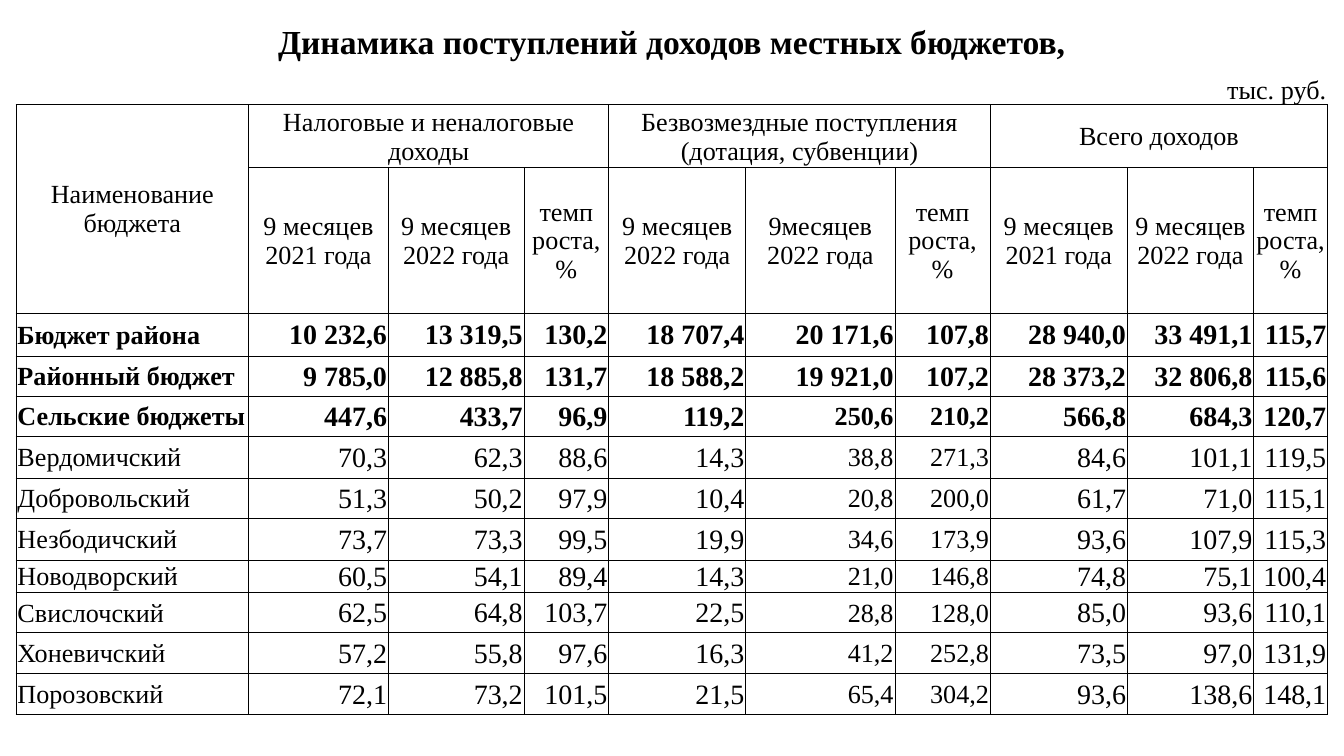
from itertools import accumulate

from lxml.etree import SubElement
from pptx import Presentation
from pptx.dml.color import RGBColor
from pptx.enum.text import MSO_ANCHOR as Anchor, PP_ALIGN as Align
from pptx.oxml.ns import qn
from pptx.util import Inches, Pt

FONT = "Times New Roman"
BLACK = "000000"
PLAIN_STYLE = "{2D5ABB26-0587-4C30-8999-92F81FD0307C}"
COLUMN_WIDTHS = [1.73, 1.04, 0.74, 0.27, 0.63, 0.89, 0.13, 1.11, 0.71, 0.73, 0.29, 0.6, 0.34, 0.55]
ROW_HEIGHTS = [0.32, 0.32, 0.47, 1.08, 0.32, 0.3, 0.3, 0.31, 0.3, 0.31, 0.14, 0.3, 0.3, 0.31]

TITLE_SPANS = [14]
UNIT_SPANS = [1, 2, 3, 3, 1, 2, 2]
GROUP_SPANS = [1, 4, 4, 5]
DATA_SPANS = [1, 1, 2, 1, 2, 1, 1, 2, 2, 1]

TITLE = "Динамика поступлений доходов местных бюджетов,"
UNIT = "тыс. руб."
GROUPS = [
    "Наименование бюджета",
    "Налоговые и неналоговые доходы",
    "Безвозмездные поступления (дотация, субвенции)",
    "Всего доходов",
]
YEAR_2021 = "9 месяцев\n2021 года"
YEAR_2022 = "9 месяцев\n2022 года"
GROWTH = "темп\nроста, %"
PERIODS = [
    "", YEAR_2021, YEAR_2022, GROWTH,
    "9 месяцев 2022 года", "9месяцев\n2022 года", GROWTH,
    YEAR_2021, YEAR_2022, GROWTH,
]
BUDGETS = [
    ["Бюджет района", "10 232,6", "13 319,5", "130,2", "18 707,4", "20 171,6", "107,8", "28 940,0", "33 491,1", "115,7"],
    ["Районный бюджет", "9 785,0", "12 885,8", "131,7", "18 588,2", "19 921,0", "107,2", "28 373,2", "32 806,8", "115,6"],
    ["Сельские бюджеты", "447,6", "433,7", "96,9", "119,2", "250,6", "210,2", "566,8", "684,3", "120,7"],
    ["Вердомичский", "70,3", "62,3", "88,6", "14,3", "38,8", "271,3", "84,6", "101,1", "119,5"],
    ["Добровольский", "51,3", "50,2", "97,9", "10,4", "20,8", "200,0", "61,7", "71,0", "115,1"],
    ["Незбодичский", "73,7", "73,3", "99,5", "19,9", "34,6", "173,9", "93,6", "107,9", "115,3"],
    ["Новодворский", "60,5", "54,1", "89,4", "14,3", "21,0", "146,8", "74,8", "75,1", "100,4"],
    ["Свислочский", "62,5", "64,8", "103,7", "22,5", "28,8", "128,0", "85,0", "93,6", "110,1"],
    ["Хоневичский", "57,2", "55,8", "97,6", "16,3", "41,2", "252,8", "73,5", "97,0", "131,9"],
    ["Порозовский", "72,1", "73,2", "101,5", "21,5", "65,4", "304,2", "93,6", "138,6", "148,1"],
]


def color(value):
    return RGBColor.from_string(value)


def apply(target, values):
    for name, value in values.items():
        setattr(target, name, value)


def add_border(cell, sides):
    properties = cell._tc.get_or_add_tcPr()
    for side in sides:
        line = SubElement(properties, qn(f"a:ln{side}"), w=str(Pt(0.5)))
        fill = SubElement(line, qn("a:solidFill"))
        SubElement(fill, qn("a:srgbClr"), val=BLACK)


def write_cell(cell, text, size=14, bold=False, align=Align.CENTER, anchor=Anchor.MIDDLE):
    cell.text = text
    cell.vertical_anchor = anchor
    for para in cell.text_frame.paragraphs:
        para.alignment = align
        for span in para.runs:
            apply(span.font, {"name": FONT, "size": Pt(size), "bold": bold})
            span.font.color.rgb = color(BLACK)


def merge_row(table, row, spans):
    starts = list(accumulate([0] + spans[:-1]))
    for start, width in zip(starts, spans):
        if width > 1:
            table.cell(row, start).merge(table.cell(row, start + width - 1))
    return [table.cell(row, start) for start in starts]


def add_grid(page):
    frame = page.shapes.add_table(
        len(ROW_HEIGHTS), len(COLUMN_WIDTHS), Inches(0.12), Inches(0.14),
        Inches(sum(COLUMN_WIDTHS)), Inches(sum(ROW_HEIGHTS)))
    table = frame.table
    table._tbl.tblPr.find(qn("a:tableStyleId")).text = PLAIN_STYLE
    apply(table, {"first_row": False, "horz_banding": False})
    for column, width in zip(table.columns, COLUMN_WIDTHS):
        column.width = Inches(width)
    for index, (row, height) in enumerate(zip(table.rows, ROW_HEIGHTS)):
        row.height = Inches(height)
        for cell in row.cells:
            apply(cell, {"margin_left": Inches(0.01), "margin_right": Inches(0.01),
                         "margin_top": Inches(0.01), "margin_bottom": 0})
            add_border(cell, ["", "B", "LRTB"][min(index, 2)])
            cell.fill.background()
    return table


def fill_headings(table):
    write_cell(merge_row(table, 0, TITLE_SPANS)[0], TITLE, 18, True, anchor=Anchor.BOTTOM)
    write_cell(merge_row(table, 1, UNIT_SPANS)[-1], UNIT, align=Align.RIGHT, anchor=Anchor.BOTTOM)
    for row, spans, labels in [(2, GROUP_SPANS, GROUPS), (3, DATA_SPANS, PERIODS)]:
        for cell, label in zip(merge_row(table, row, spans), labels):
            write_cell(cell, label)
    table.cell(2, 0).merge(table.cell(3, 0))


def fill_budgets(table):
    for index, budget in enumerate(BUDGETS):
        cells = merge_row(table, index + 4, DATA_SPANS)
        bold = index < 3
        write_cell(cells[0], budget[0], bold=bold, align=Align.LEFT)
        for column in range(1, len(budget)):
            size = 14 if index >= 2 and column in (5, 6) else 15
            write_cell(cells[column], budget[column], size, bold, Align.RIGHT)


def main():
    deck = Presentation()
    apply(deck, {"slide_width": Inches(10), "slide_height": Inches(10) * 9 // 16})
    page = deck.slides.add_slide(deck.slide_layouts[6])
    table = add_grid(page)
    fill_headings(table)
    fill_budgets(table)
    deck.save("out.pptx")


if __name__ == "__main__":
    main()
